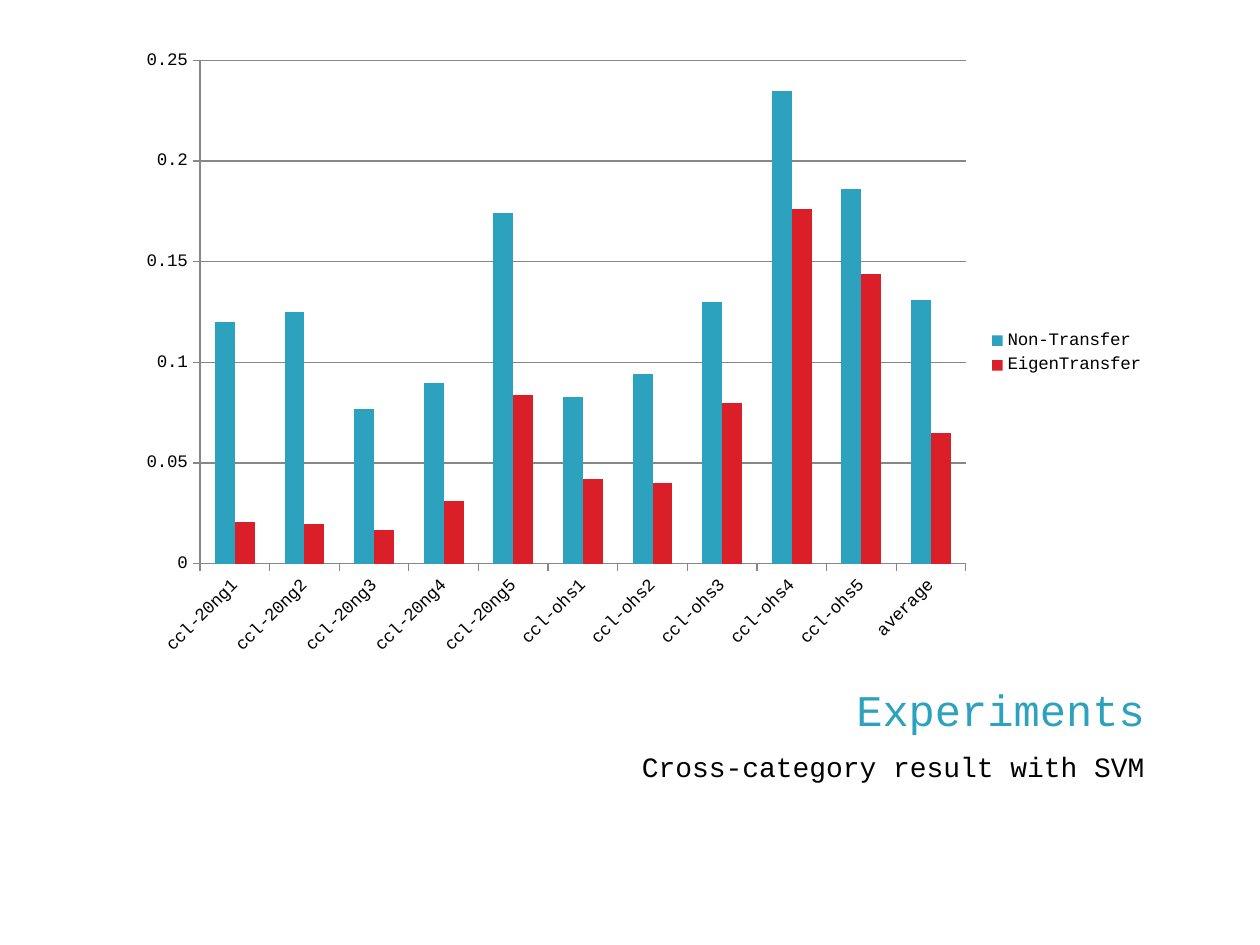
from dataclasses import dataclass
from typing import Any

from pptx import Presentation
from pptx.chart.data import CategoryChartData
from pptx.dml.color import RGBColor
from pptx.enum.chart import XL_CHART_TYPE, XL_LEGEND_POSITION, XL_TICK_LABEL_POSITION, XL_TICK_MARK
from pptx.enum.text import MSO_ANCHOR, PP_ALIGN
from pptx.util import Emu, Pt

EMU_PER_INCH = 914400
PX_PER_INCH = 126


@dataclass(frozen=True)
class Theme:
    font: str = "Courier New"
    accent: RGBColor = RGBColor(0x2D, 0xA2, 0xBF)
    contrast: RGBColor = RGBColor(0xDA, 0x1F, 0x28)
    text: RGBColor = RGBColor(0, 0, 0)
    axis: RGBColor = RGBColor(0x87, 0x87, 0x87)
    title_size: int = 25
    subtitle_size: int = 16
    chart_size: int = 10


@dataclass(frozen=True)
class Box:
    left: int
    top: int
    width: int
    height: int


@dataclass(frozen=True)
class Label:
    text: str
    box: Box
    size: int
    color: RGBColor
    anchor: MSO_ANCHOR
    margin_top: int


@dataclass(frozen=True)
class ResultSeries:
    name: str
    values: tuple[float, ...]
    color: RGBColor


THEME = Theme()
CHART_BOX = Box(126, 38, 1031, 630)
CATEGORIES = [f"ccl-{group}{number}" for group in ("20ng", "ohs") for number in range(1, 6)] + ["average"]
RESULTS = (
    ResultSeries("Non-Transfer",
                 (0.12, 0.125, 0.077, 0.09, 0.174, 0.083, 0.094, 0.13, 0.235, 0.186, 0.131),
                 THEME.accent),
    ResultSeries("EigenTransfer",
                 (0.021, 0.02, 0.017, 0.031, 0.084, 0.042, 0.04, 0.08, 0.176, 0.144, 0.065),
                 THEME.contrast),
)
LABELS = (
    Label("Experiments", Box(126, 672, 1031, 63), THEME.title_size, THEME.accent, MSO_ANCHOR.BOTTOM, 0),
    Label("Cross-category result with SVM", Box(609, 738, 548, 126), THEME.subtitle_size,
          THEME.text, MSO_ANCHOR.TOP, 12),
)


def px(length: int) -> Emu:
    return Emu(round(length * EMU_PER_INCH / PX_PER_INCH))


def place(box: Box) -> tuple[Emu, ...]:
    return px(box.left), px(box.top), px(box.width), px(box.height)


def apply_format(target: Any, values: dict[str, Any]) -> None:
    for name, value in values.items():
        setattr(target, name, value)


def style_font(font: Any, size: int, color: RGBColor) -> None:
    apply_format(font, {"name": THEME.font, "size": Pt(size), "bold": False})
    font.color.rgb = color


def style_line(line: Any) -> None:
    line.color.rgb = THEME.axis
    line.width = Pt(0.75)


def draw_label(slide: Any, label: Label) -> None:
    frame = slide.shapes.add_textbox(*place(label.box)).text_frame
    apply_format(frame, {
        "word_wrap": True,
        "vertical_anchor": label.anchor,
        "margin_top": px(label.margin_top),
        "margin_bottom": 0,
    })
    paragraph = frame.paragraphs[0]
    apply_format(paragraph, {"text": label.text, "alignment": PP_ALIGN.RIGHT})
    style_font(paragraph.runs[0].font, label.size, label.color)


def draw_chart(slide: Any, box: Box, results: tuple[ResultSeries, ...]) -> None:
    data = CategoryChartData()
    data.categories = CATEGORIES
    for result in results:
        data.add_series(result.name, result.values)
    chart = slide.shapes.add_chart(XL_CHART_TYPE.COLUMN_CLUSTERED, *place(box), data).chart
    apply_format(chart, {"has_title": False, "has_legend": True})
    style_font(chart.font, THEME.chart_size, THEME.text)
    apply_format(chart.legend, {"position": XL_LEGEND_POSITION.RIGHT, "include_in_layout": False})

    plot = chart.plots[0]
    apply_format(plot, {"gap_width": 150, "overlap": 0, "vary_by_categories": False})
    for series, result in zip(plot.series, results):
        series.format.fill.solid()
        series.format.fill.fore_color.rgb = result.color

    for axis in (chart.category_axis, chart.value_axis):
        apply_format(axis, {
            "major_tick_mark": XL_TICK_MARK.OUTSIDE,
            "minor_tick_mark": XL_TICK_MARK.NONE,
            "tick_label_position": XL_TICK_LABEL_POSITION.NEXT_TO_AXIS,
        })
        style_line(axis.format.line)
        style_font(axis.tick_labels.font, THEME.chart_size, THEME.text)
    apply_format(chart.value_axis, {
        "minimum_scale": 0, "maximum_scale": 0.25, "major_unit": 0.05, "has_major_gridlines": True,
    })
    style_line(chart.value_axis.major_gridlines.format.line)
    apply_format(chart.value_axis.tick_labels, {"number_format": "General", "number_format_is_linked": False})
    label_body = chart.category_axis._element.find(".//{*}txPr/{*}bodyPr")
    label_body.set("rot", str(-45 * 60000))


def main() -> None:
    presentation = Presentation()
    apply_format(presentation, {"slide_width": px(1260), "slide_height": px(945)})
    slide = presentation.slides.add_slide(presentation.slide_layouts[6])
    for label in LABELS:
        draw_label(slide, label)
    draw_chart(slide, CHART_BOX, RESULTS)
    presentation.save("out.pptx")


if __name__ == "__main__":
    main()
